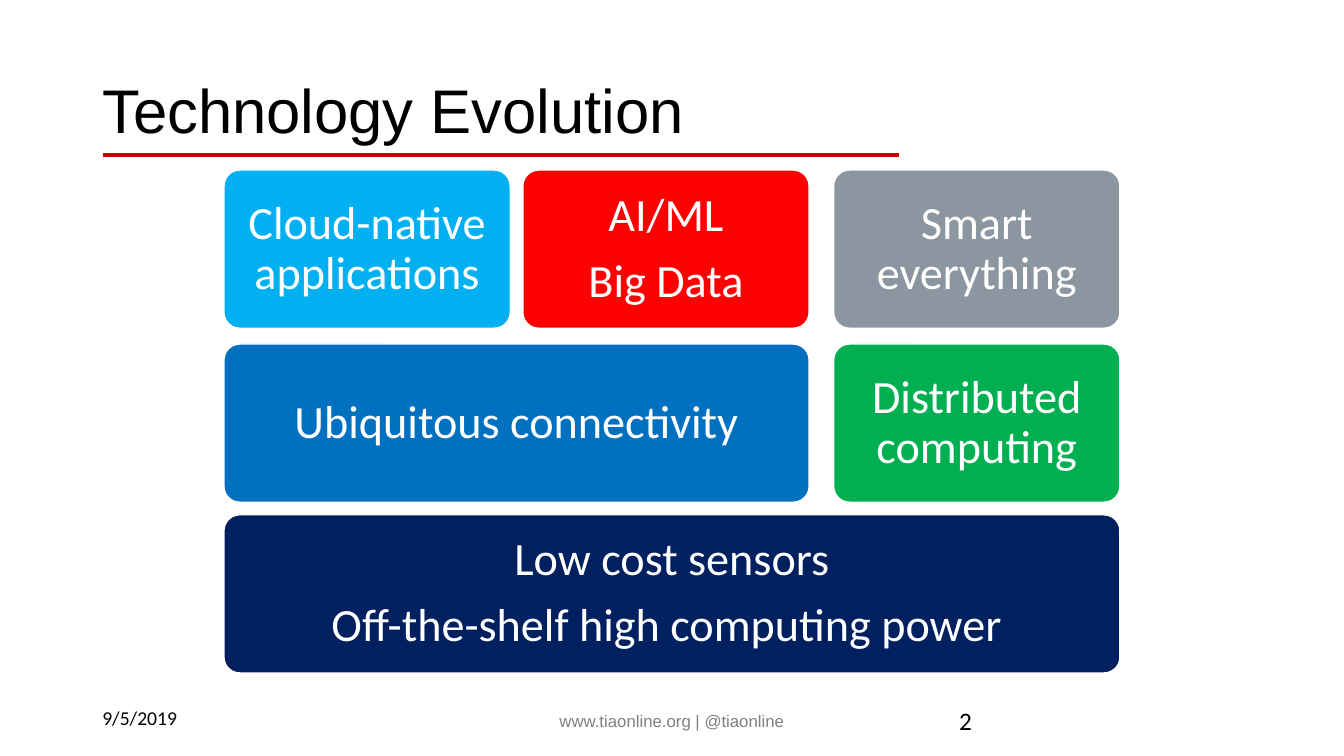
from lxml.etree import SubElement
from pptx import Presentation
from pptx.dml.color import RGBColor
from pptx.enum.shapes import MSO_CONNECTOR, MSO_SHAPE
from pptx.enum.text import MSO_ANCHOR, PP_ALIGN
from pptx.oxml.ns import qn
from pptx.util import Pt

COLORS = {
    "black": "000000", "white": "FFFFFF", "rule": "D20000", "footer": "808080",
    "navy": "002060", "blue": "0070C0", "sky": "00B0F0",
    "red": "FF0000", "green": "00B050", "gray": "8C96A0",
}

BLOCKS = [
    (2, 0, 2, "navy", ["Low cost sensors", "Off-the-shelf high computing power "]),
    (1, 0, 1, "blue", ["Ubiquitous connectivity"]),
    (0, 0, 0, "sky", ["Cloud-native applications"]),
    (0, 1, 1, "red", ["AI/ML", "Big Data"]),
    (1, 2, 2, "green", ["Distributed computing"]),
    (0, 2, 2, "gray", ["Smart everything"]),
]

TEXT_BOXES = [
    ("Technology Evolution", (66, 28.8, 828, 104.4),
     dict(size=44, font="Arial", anchor=MSO_ANCHOR.MIDDLE, line_spacing=0.9)),
    ("9/5/2019", (66, 500.5, 216, 28.8), dict(size=14)),
    ("www.tiaonline.org | @tiaonline", (318, 500.5, 324, 28.8),
     dict(size=12, font="Arial", color="footer", align=PP_ALIGN.CENTER,
          anchor=MSO_ANCHOR.MIDDLE)),
    ("2", (678, 500.5, 216, 28.8), dict(size=18)),
]

COLUMN_LEFTS = [160, 373.5, 595.5]
ROW_TOPS = [121.5, 245.75, 367.75]
BLOCK_WIDTH, BLOCK_HEIGHT = 204.5, 113


def rgb(name):
    return RGBColor.from_string(COLORS[name])


def write_text(shape, lines, size, font="Calibri", color="black",
               align=PP_ALIGN.LEFT, anchor=MSO_ANCHOR.TOP, line_spacing=1.0,
               gap=0, inset=None):
    frame = shape.text_frame
    frame.word_wrap = True
    frame.vertical_anchor = anchor
    if inset is not None:
        frame.margin_left = frame.margin_right = Pt(inset)
        frame.margin_top = frame.margin_bottom = Pt(inset)
    for index, line in enumerate(lines):
        paragraph = frame.add_paragraph() if index else frame.paragraphs[0]
        paragraph.alignment = align
        paragraph.line_spacing = line_spacing
        if index:
            paragraph.space_before = Pt(gap)
        run = paragraph.add_run()
        run.text = line
        run.font.size = Pt(size)
        run.font.name = font
        run.font.color.rgb = rgb(color)


def add_rule(slide, left, right, top):
    rule = slide.shapes.add_connector(
        MSO_CONNECTOR.STRAIGHT, Pt(left), Pt(top), Pt(right), Pt(top))
    rule.line.color.rgb = rgb("rule")
    rule.line.width = Pt(3)
    SubElement(rule._element.spPr, qn("a:effectLst"))


def add_block(slide, row, first_column, last_column, color, lines):
    left = COLUMN_LEFTS[first_column]
    width = COLUMN_LEFTS[last_column] + BLOCK_WIDTH - left
    block = slide.shapes.add_shape(
        MSO_SHAPE.ROUNDED_RECTANGLE, Pt(left), Pt(ROW_TOPS[row]),
        Pt(width), Pt(BLOCK_HEIGHT))
    block.adjustments[0] = 0.1
    block.shadow.inherit = False
    block.fill.solid()
    block.fill.fore_color.rgb = rgb(color)
    block.line.color.rgb = rgb("white")
    block.line.width = Pt(1)
    write_text(block, lines, size=33, color="white", align=PP_ALIGN.CENTER,
               anchor=MSO_ANCHOR.MIDDLE, line_spacing=0.9, gap=11.5, inset=10)


def main():
    presentation = Presentation()
    presentation.slide_width, presentation.slide_height = Pt(960), Pt(540)
    slide = presentation.slides.add_slide(presentation.slide_layouts[6])
    add_rule(slide, 73.5, 642, 110.5)
    for text, bounds, style in TEXT_BOXES:
        box = slide.shapes.add_textbox(*map(Pt, bounds))
        write_text(box, [text], **style)
    for block in BLOCKS:
        add_block(slide, *block)
    presentation.save("out.pptx")


if __name__ == "__main__":
    main()
